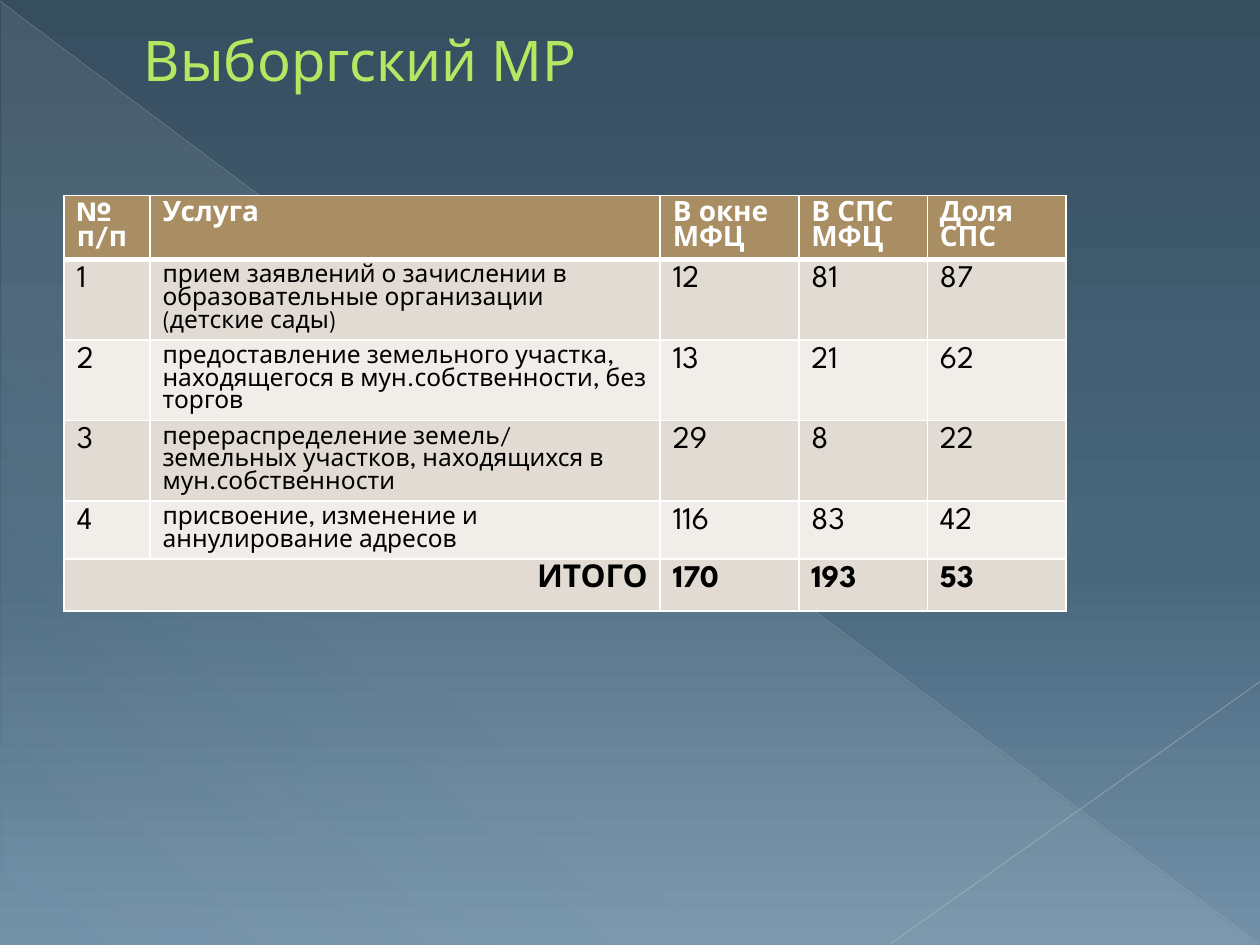
import pptx
import pptx.dml.color
import pptx.enum.shapes
import pptx.enum.text
import pptx.oxml
import pptx.oxml.ns
import pptx.util
from lxml import etree

Inches = pptx.util.Inches
Pt = pptx.util.Pt
qn = pptx.oxml.ns.qn
PP_ALIGN = pptx.enum.text.PP_ALIGN

FONT = "League Spartan"
COLORS = {
    "title": "B4E862",
    "title_outline": "698A18",
    "sky_top": "374E5F",
    "sky_middle": "49687E",
    "sky_bottom": "7291A8",
    "triangle": "E7ECED",
    "long_line": "BAC0C6",
    "short_line": "C2C7CC",
    "header": "A98D63",
    "odd_row": "E2DBD3",
    "even_row": "F1EEEA",
    "white": "FFFFFF",
    "black": "000000",
}
COLUMN_WIDTHS = [0.68, 4.05, 1.1, 1.02, 1.1]
ROW_HEIGHT = 0.41
ROWS = [
    ["№ п/п", "Услуга", "В окне МФЦ", "В СПС МФЦ", "Доля СПС"],
    ["1", "прием заявлений о зачислении в образовательные организации (детские сады)",
     "12", "81", "87"],
    ["2", "предоставление земельного участка, находящегося в мун.собственности, без торгов",
     "13", "21", "62"],
    ["3", "перераспределение земель/ земельных участков, находящихся в мун.собственности",
     "29", "8", "22"],
    ["4", "присвоение, изменение и аннулирование адресов", "116", "83", "42"],
    ["ИТОГО", "", "170", "193", "53"],
]


def rgb(name):
    return pptx.dml.color.RGBColor.from_string(COLORS[name])


def solid_fill(parent, color):
    fill = etree.SubElement(parent, qn("a:solidFill"))
    etree.SubElement(fill, qn("a:srgbClr"), val=COLORS[color])


def set_alpha(color_element, percent):
    etree.SubElement(color_element, qn("a:alpha"), val=str(percent * 1000))


def set_gradient(fill, element, stops, angle):
    """Fill with (position, colour, opacity) stops, the angle running clockwise."""
    fill.solid()
    solid = element.find(".//" + qn("a:solidFill"))
    gradient = etree.Element(qn("a:gradFill"), rotWithShape="1")
    stop_list = etree.SubElement(gradient, qn("a:gsLst"))
    for position, color, opacity in stops:
        stop = etree.SubElement(stop_list, qn("a:gs"), pos=str(position * 1000))
        set_alpha(etree.SubElement(stop, qn("a:srgbClr"), val=COLORS[color]), opacity)
    etree.SubElement(gradient, qn("a:lin"), ang=str(angle * 60000), scaled="0")
    solid.getparent().replace(solid, gradient)


def write_text(text_frame, text, *, size, color, bold=False, align=PP_ALIGN.LEFT):
    paragraph = text_frame.paragraphs[0]
    paragraph.alignment = align
    run = paragraph.add_run()
    run.text = text
    run.font.name = FONT
    run.font.size = Pt(size)
    run.font.bold = bold
    run.font.color.rgb = rgb(color)
    return run


def add_line(slide, start, end, color, width, opacity):
    line = slide.shapes.add_connector(
        pptx.enum.shapes.MSO_CONNECTOR.STRAIGHT, *map(Inches, start + end))
    line.line.width = Pt(width)
    line.line.color.rgb = rgb(color)
    properties = line._element.spPr
    set_alpha(properties.find(".//" + qn("a:srgbClr")), opacity)
    etree.SubElement(properties, qn("a:effectLst"))


def add_backdrop(slide):
    set_gradient(slide.background.fill, slide._element,
                 [(0, "sky_top", 100), (60, "sky_middle", 100), (100, "sky_bottom", 100)], 90)
    triangle = slide.shapes.add_shape(
        pptx.enum.shapes.MSO_SHAPE.RIGHT_TRIANGLE,
        Inches(0.01), Inches(0.02), Inches(9.98), Inches(7.48))
    triangle.shadow.inherit = False
    triangle.line.fill.background()
    set_gradient(triangle.fill, triangle._element.spPr,
                 [(0, "triangle", 10), (70, "triangle", 8), (100, "triangle", 1)], 133)
    add_line(slide, (0, 0.01), (9.99, 7.49), "long_line", 0.39, 35)
    add_line(slide, (10, 5.41), (7.07, 7.49), "short_line", 0.47, 45)


def format_title(slide, text):
    title = slide.shapes.title
    title.left, title.top, title.width, title.height = map(Inches, (0.51, 0, 9, 0.94))
    title.text_frame.vertical_anchor = pptx.enum.text.MSO_ANCHOR.MIDDLE
    run = write_text(title.text_frame, text, size=32, color="title")
    title.text_frame.paragraphs[0]._p.get_or_add_pPr().set("marL", str(Inches(0.53)))
    outline = etree.Element(qn("a:ln"), w=str(Pt(0.5)))
    solid_fill(outline, "title_outline")
    run.font._element.insert(0, outline)
    # The title stands in front of the backdrop.
    slide.shapes._spTree.append(title._element)


def set_borders(cell, top, bottom):
    properties = cell._tc.get_or_add_tcPr()
    widths = {"a:lnL": 1, "a:lnR": 1, "a:lnT": top, "a:lnB": bottom}
    for index, (side, width) in enumerate(widths.items()):
        border = etree.Element(qn(side), w=str(Pt(width)))
        solid_fill(border, "white")
        properties.insert(index, border)


def add_services_table(slide):
    last = len(ROWS) - 1
    table = slide.shapes.add_table(
        len(ROWS), len(COLUMN_WIDTHS), Inches(0.51), Inches(1.55),
        Inches(sum(COLUMN_WIDTHS)), Inches(ROW_HEIGHT * len(ROWS))).table
    for column, width in zip(table.columns, COLUMN_WIDTHS):
        column.width = Inches(width)
    table.cell(last, 0).merge(table.cell(last, 1))
    for row_index, texts in enumerate(ROWS):
        header, total = row_index == 0, row_index == last
        table.rows[row_index].height = Inches(ROW_HEIGHT)
        fill = "header" if header else "odd_row" if row_index % 2 else "even_row"
        for column_index, text in enumerate(texts):
            cell = table.cell(row_index, column_index)
            cell.fill.solid()
            cell.fill.fore_color.rgb = rgb(fill)
            set_borders(cell, top=3 if row_index == 1 else 1, bottom=3 if header else 1)
            if cell.is_spanned:
                continue
            write_text(
                cell.text_frame, text,
                size=16 if header else 14 if column_index == 1 else 18,
                color="white" if header else "black",
                bold=header or total,
                align=PP_ALIGN.RIGHT if cell.is_merge_origin else PP_ALIGN.LEFT)


def main():
    presentation = pptx.Presentation()
    presentation.slide_width, presentation.slide_height = Inches(10), Inches(7.5)
    slide = presentation.slides.add_slide(presentation.slide_layouts[5])
    add_backdrop(slide)
    format_title(slide, "Выборгский МР")
    add_services_table(slide)
    presentation.save("out.pptx")


if __name__ == "__main__":
    main()
